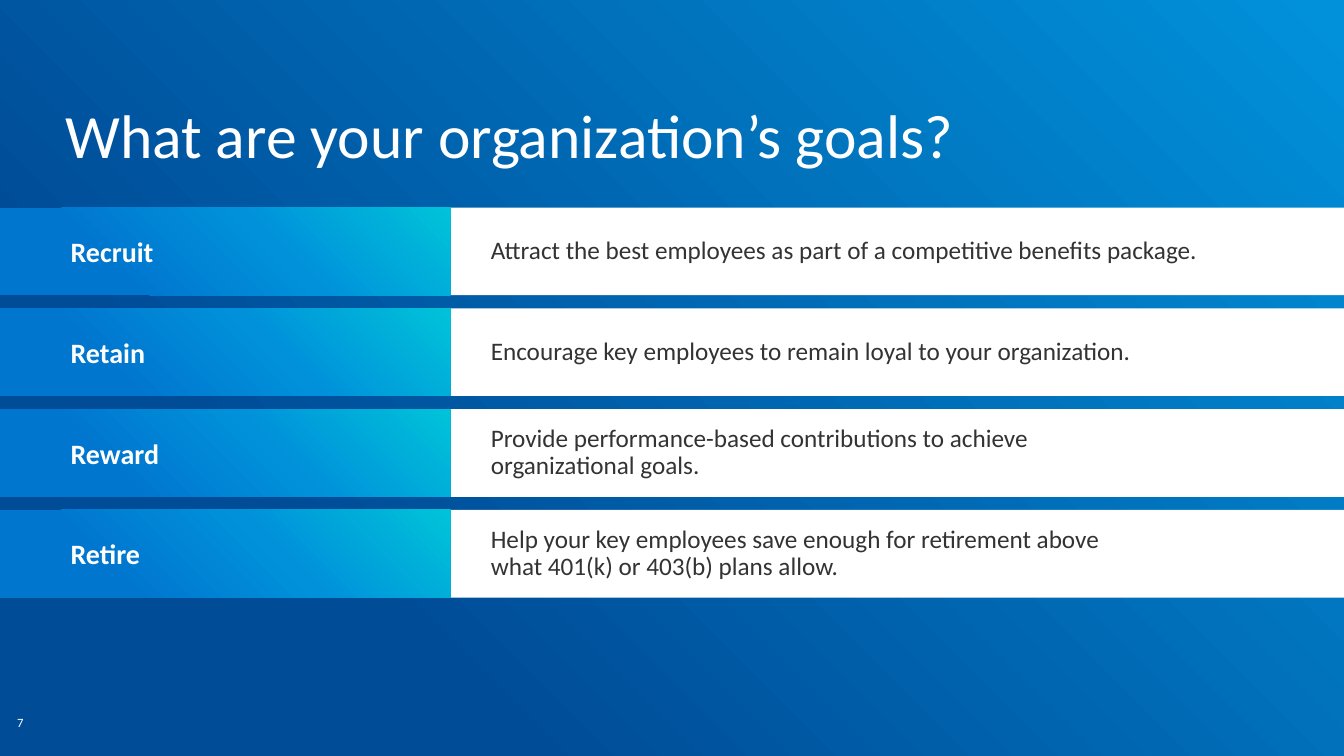
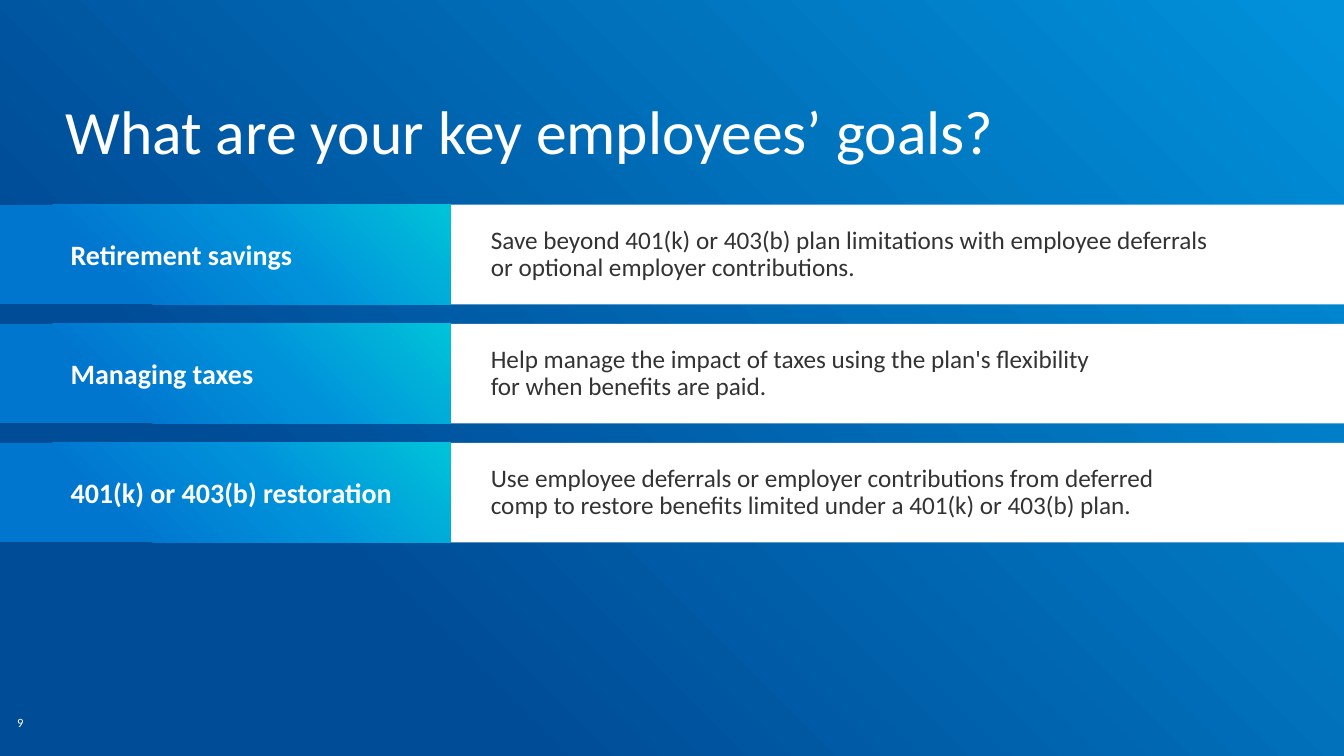
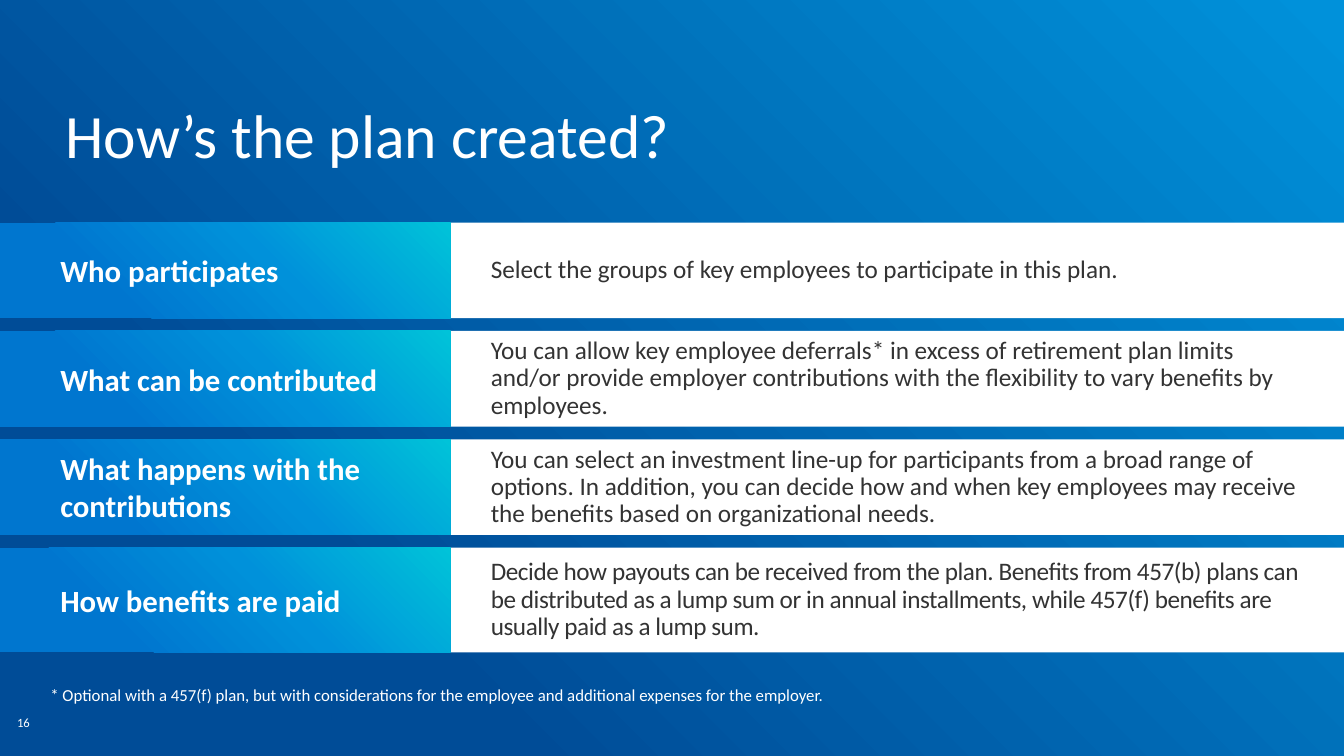
from dataclasses import dataclass

from pptx import Presentation
from pptx.dml.color import RGBColor
from pptx.enum.shapes import MSO_SHAPE as Shape
from pptx.enum.text import MSO_ANCHOR as Anchor, MSO_AUTO_SIZE as AutoSize, PP_ALIGN as Align
from pptx.oxml.ns import qn
from pptx.util import Cm, Pt
from lxml.etree import SubElement


@dataclass(frozen=True)
class Theme:
    font: str = "Calibri"
    white: str = "FFFFFF"
    ink: str = "333333"
    backdrop: tuple = ((25, "004C97"), (99, "0091DA"))
    label_fill: tuple = ((25, "0076CF"), (60, "0091DA"), (100, "00C3D9"))
    title_size: float = 44
    label_size: float = 20
    large_label_size: float = 22
    detail_size: float = 18
    footnote_size: float = 12
    number_size: float = 9


THEME = Theme()
WIDTH, HEIGHT = 33.87, 19.05
LABEL_WIDTH = 11.35


def write(frame, text, *, size, color, bold=False, anchor=Anchor.TOP,
          insets=(0, 0, 0, 0), line_spacing=None, space_after=None, tracking=None):
    frame.word_wrap = True
    frame.auto_size = AutoSize.NONE
    frame.vertical_anchor = anchor
    (frame.margin_left, frame.margin_top,
     frame.margin_right, frame.margin_bottom) = map(Cm, insets)
    paragraph = frame.paragraphs[0]
    paragraph.text = text
    paragraph.alignment = Align.LEFT
    if line_spacing:
        paragraph.line_spacing = line_spacing
    if space_after:
        paragraph.space_after = Pt(space_after)
    for run in paragraph.runs:
        run.font.name = THEME.font
        run.font.size = Pt(size)
        run.font.bold = bold
        run.font.color.rgb = RGBColor.from_string(color)
        if tracking:
            run.font._element.set("spc", str(round(tracking * 100)))


def fill_gradient(fill, owner, stops):
    fill.gradient()
    fill.gradient_angle = 45
    stop_list = owner.find(".//" + qn("a:gsLst"))
    for default_stop in list(stop_list):
        stop_list.remove(default_stop)
    for position, color in stops:
        stop = SubElement(stop_list, qn("a:gs"), pos=str(position * 1000))
        SubElement(stop, qn("a:srgbClr"), val=color)


class Deck:
    def __init__(self, theme):
        self.theme = theme
        self.slide = None
        self.presentation = Presentation()
        self.presentation.slide_width = Cm(WIDTH)
        self.presentation.slide_height = Cm(HEIGHT)
        master = self.presentation.slide_master
        fill_gradient(master.background.fill, master._element, theme.backdrop)

    def start(self, title, number, title_top=2.44):
        self.slide = self.presentation.slides.add_slide(self.presentation.slide_layouts[5])
        heading = self.slide.shapes.title
        heading.left, heading.top = Cm(1.65), Cm(title_top)
        heading.width, heading.height = Cm(30.48), Cm(1.75)
        write(heading.text_frame, title, size=self.theme.title_size, color=self.theme.white)
        self.note(number, 0.43, 17.35, 1.17, 1.04,
                  size=self.theme.number_size, anchor=Anchor.BOTTOM)

    def note(self, text, left, top, width, height, **text_format):
        box = self.slide.shapes.add_textbox(Cm(left), Cm(top), Cm(width), Cm(height))
        write(box.text_frame, text, color=self.theme.white, **text_format)

    def footnote(self, text):
        self.note(text, 1.02, 17.12, 28.52, 1.17,
                  size=self.theme.footnote_size, insets=(0.25, 0.13, 0.25, 0.13))

    def panel(self, left, top, width, height):
        panel = self.slide.shapes.add_shape(
            Shape.RECTANGLE, Cm(left), Cm(top), Cm(width), Cm(height))
        panel.shadow.inherit = False
        panel.line.fill.background()
        return panel

    def band(self, label, detail, top, height, label_size, indent, tracking):
        description = self.panel(LABEL_WIDTH, top, WIDTH - LABEL_WIDTH, height)
        description.fill.solid()
        description.fill.fore_color.rgb = RGBColor.from_string(self.theme.white)
        write(description.text_frame, detail, size=self.theme.detail_size,
              color=self.theme.ink, anchor=Anchor.MIDDLE, insets=(1.02,) * 4,
              line_spacing=0.9, space_after=8, tracking=tracking)
        tab = self.panel(0, top, LABEL_WIDTH, height)
        fill_gradient(tab.fill, tab._element, self.theme.label_fill)
        write(tab.text_frame, label, size=label_size, color=self.theme.white, bold=True,
              anchor=Anchor.MIDDLE, insets=(indent, 0.13, 1.02, 0.13))

    def bands(self, rows, top, height, gap, label_size=None, indent=1.78,
              last_height=None, last_tracking=None):
        for index, (label, detail) in enumerate(rows):
            is_last = index == len(rows) - 1
            self.band(label, detail, top + index * (height + gap),
                      last_height if is_last and last_height else height,
                      label_size or self.theme.label_size, indent,
                      last_tracking if is_last else None)

    def save(self):
        self.presentation.save("out.pptx")


ORGANIZATION_GOALS = [
    ("Recruit", "Attract the best employees as part of a competitive benefits package."),
    ("Retain", "Encourage key employees to remain loyal to your organization."),
    ("Reward", "Provide performance-based contributions to achieve\vorganizational goals."),
    ("Retire", "Help your key employees save enough for retirement above\v"
               "what 401(k) or 403(b) plans allow."),
]
EMPLOYEE_GOALS = [
    ("Retirement savings",
     "Save beyond 401(k) or 403(b) plan limitations with employee deferrals\v"
     "or optional employer contributions."),
    ("Managing taxes",
     "Help manage the impact of taxes using the plan's flexibility\v"
     "for when benefits are paid."),
    ("401(k) or 403(b) restoration",
     "Use employee deferrals or employer contributions from deferred\v"
     "comp to restore benefits limited under a 401(k) or 403(b) plan."),
]
PLAN_STEPS = [
    ("Who participates", "Select the groups of key employees to participate in this plan."),
    ("What can be contributed",
     "You can allow key employee deferrals* in excess of retirement plan limits and/or "
     "provide employer contributions with the flexibility to vary benefits by employees."),
    ("What happens with the contributions",
     "You can select an investment line-up for participants from a broad range of options. "
     "In addition, you can decide how and when key employees may receive the benefits "
     "based on organizational needs."),
    ("How benefits are paid",
     "Decide how payouts can be received from the plan. Benefits from 457(b) plans can be "
     "distributed as a lump sum or in annual installments, while 457(f) benefits are "
     "usually paid as a lump sum."),
]


def main():
    deck = Deck(THEME)

    deck.start("What are your organization’s goals?", "7")
    deck.bands(ORGANIZATION_GOALS, top=5.23, height=2.21, gap=0.33)

    deck.start("What are your key employees’ goals?", "9", title_top=2.34)
    deck.bands(EMPLOYEE_GOALS, top=5.16, height=2.51, gap=0.49)

    deck.start("How’s the plan created?", "16")
    deck.bands(PLAN_STEPS, top=5.61, height=2.41, gap=0.32,
               label_size=THEME.large_label_size, indent=1.52,
               last_height=2.64, last_tracking=-0.3)
    deck.footnote("* Optional with a 457(f) plan, but with considerations for the employee "
                  "and additional expenses for the employer.")

    deck.save()


if __name__ == "__main__":
    main()
